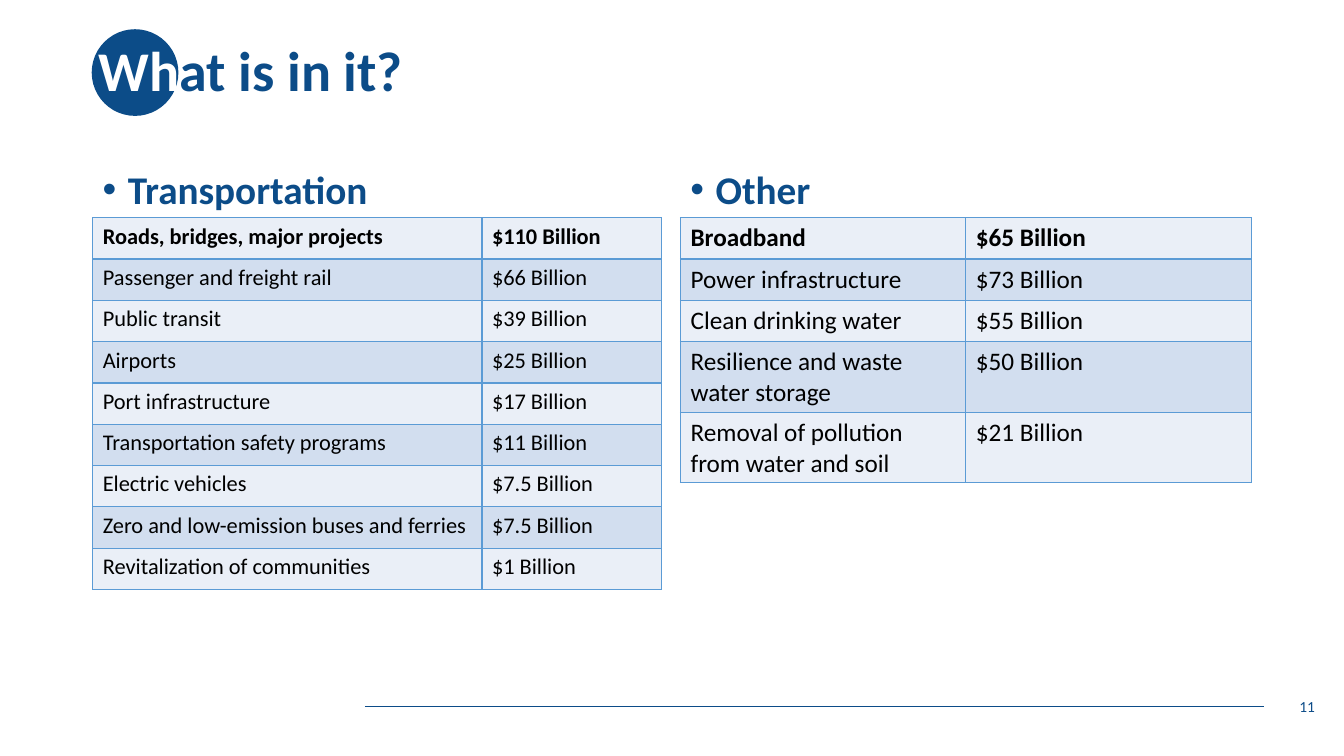
from lxml import etree
from pptx import Presentation
from pptx.dml.color import RGBColor
from pptx.enum.shapes import MSO_CONNECTOR, MSO_SHAPE
from pptx.enum.text import MSO_ANCHOR, PP_ALIGN
from pptx.oxml.ns import qn
from pptx.util import Pt

PX = 9144  # 100 px to the inch
LINE, OVAL = MSO_CONNECTOR.STRAIGHT, MSO_SHAPE.OVAL
MIDDLE, BOTTOM = MSO_ANCHOR.MIDDLE, MSO_ANCHOR.BOTTOM
LEFT, RIGHT = PP_ALIGN.LEFT, PP_ALIGN.RIGHT
NAVY, EDGE, BLACK, WHITE = "0C4C88", "5B9BD5", "000000", "FFFFFF"
BANDS = ("EAEFF7", "D2DEEF")
ROW = 41

TRANSPORT = [
    ("Roads, bridges, major projects", "$110 Billion"),
    ("Passenger and freight rail", "$66 Billion"),
    ("Public transit", "$39 Billion"),
    ("Airports", "$25 Billion"),
    ("Port infrastructure", "$17 Billion"),
    ("Transportation safety programs", "$11 Billion"),
    ("Electric vehicles", "$7.5 Billion"),
    ("Zero and low-emission buses and ferries", "$7.5 Billion"),
    ("Revitalization of communities", "$1 Billion"),
]
OTHER = [
    ("Broadband", "$65 Billion"),
    ("Power infrastructure", "$73 Billion"),
    ("Clean drinking water", "$55 Billion"),
    ("Resilience and waste water storage", "$50 Billion"),
    ("Removal of pollution from water and soil", "$21 Billion"),
]


def px(*sizes):
    return [size * PX for size in sizes]


def rgb(code):
    return RGBColor.from_string(code)


def style(para, size, color=None, bold=False):
    font = para.font
    font.name, font.size, font.bold = "Calibri", Pt(size), bold
    if color:
        font.color.rgb = rgb(color)


def add_text(slide, box, text, anchor):
    """Add a wrapping text box and return its paragraph."""
    frame = slide.shapes.add_textbox(*px(*box)).text_frame
    frame.word_wrap = True
    frame.vertical_anchor = anchor
    para = frame.paragraphs[0]
    para.text = text
    return para


def add_bullet(para, indent):
    props = para._p.get_or_add_pPr()
    props.set("marL", str(indent * PX))
    props.set("indent", str(-indent * PX))
    etree.SubElement(props, qn("a:buFont"), typeface="Arial")
    etree.SubElement(props, qn("a:buChar"), char="•")


def add_edges(cell):
    props = cell._tc.get_or_add_tcPr()
    for side in ("lnL", "lnR", "lnT", "lnB"):
        line = etree.SubElement(props, qn("a:" + side), w=str(Pt(1)))
        fill = etree.SubElement(line, qn("a:solidFill"))
        etree.SubElement(fill, qn("a:srgbClr"), val=EDGE)


def add_title(slide, box):
    """Place the title over a disc that sits behind its first two letters."""
    left, top, width, height = box
    disc = slide.shapes.add_shape(OVAL, *px(left + 3, top + 29, 86, 86))
    disc.shadow.inherit = False
    disc.fill.solid()
    disc.fill.fore_color.rgb = rgb(NAVY)
    disc.line.fill.background()

    title = slide.shapes.title
    title.left, title.top, title.width, title.height = px(*box)
    disc.element.addnext(title.element)
    title.text_frame.vertical_anchor = MIDDLE
    para = title.text_frame.paragraphs[0]
    para.alignment, para.line_spacing = LEFT, 0.9
    style(para, 40, bold=True)
    for text, color in (("Wh", WHITE), ("at is in it?", NAVY)):
        run = para.add_run()
        run.text = text
        run.font.color.rgb = rgb(color)


def add_panel(slide, box, head, rows, cols, size):
    """Add a bulleted heading with a banded table under it."""
    left, top, width, height = box
    para = add_text(slide, (left, top, width, height), head, BOTTOM)
    add_bullet(para, 25)
    para.line_spacing = 0.9
    style(para, 28, NAVY, True)

    place = px(left, top + height, width, ROW * len(rows))
    table = slide.shapes.add_table(len(rows), len(cols), *place).table
    table.first_row = table.horz_banding = False
    for col, wide in zip(table.columns, cols):
        col.width = wide * PX
    for i, row in enumerate(rows):
        table.rows[i].height = ROW * PX
        for j, text in enumerate(row):
            cell = table.cell(i, j)
            add_edges(cell)
            cell.fill.solid()
            cell.fill.fore_color.rgb = rgb(BANDS[i % 2])
            cell.text = text
            style(cell.text_frame.paragraphs[0], size, BLACK, i == 0)


def add_footer(slide, box, number):
    """Draw the rule at mid height and the page number at the right."""
    left, top, width, height = box
    mid = top + height // 2
    rule = slide.shapes.add_connector(LINE, *px(left, mid, left + 892, mid))
    rule.line.color.rgb = rgb(NAVY)
    rule.line.width = Pt(0.5)
    etree.SubElement(rule.element.spPr, qn("a:effectLst"))
    spot = (left + width - 300, top, 300, height)
    para = add_text(slide, spot, number, MIDDLE)
    para.alignment = RIGHT
    style(para, 11, NAVY)


def main():
    deck = Presentation()
    deck.slide_width, deck.slide_height = px(1333, 750)
    slide = deck.slides.add_slide(deck.slide_layouts[5])
    add_title(slide, (88, 0, 1150, 145))
    add_panel(slide, (92, 126, 564, 90), "Transportation", TRANSPORT,
              (386, 178), 16)
    add_panel(slide, (675, 126, 566, 90), "Other", OTHER, (283, 283), 18)
    add_footer(slide, (362, 681, 952, 40), "11")
    deck.save("out.pptx")


if __name__ == "__main__":
    main()
